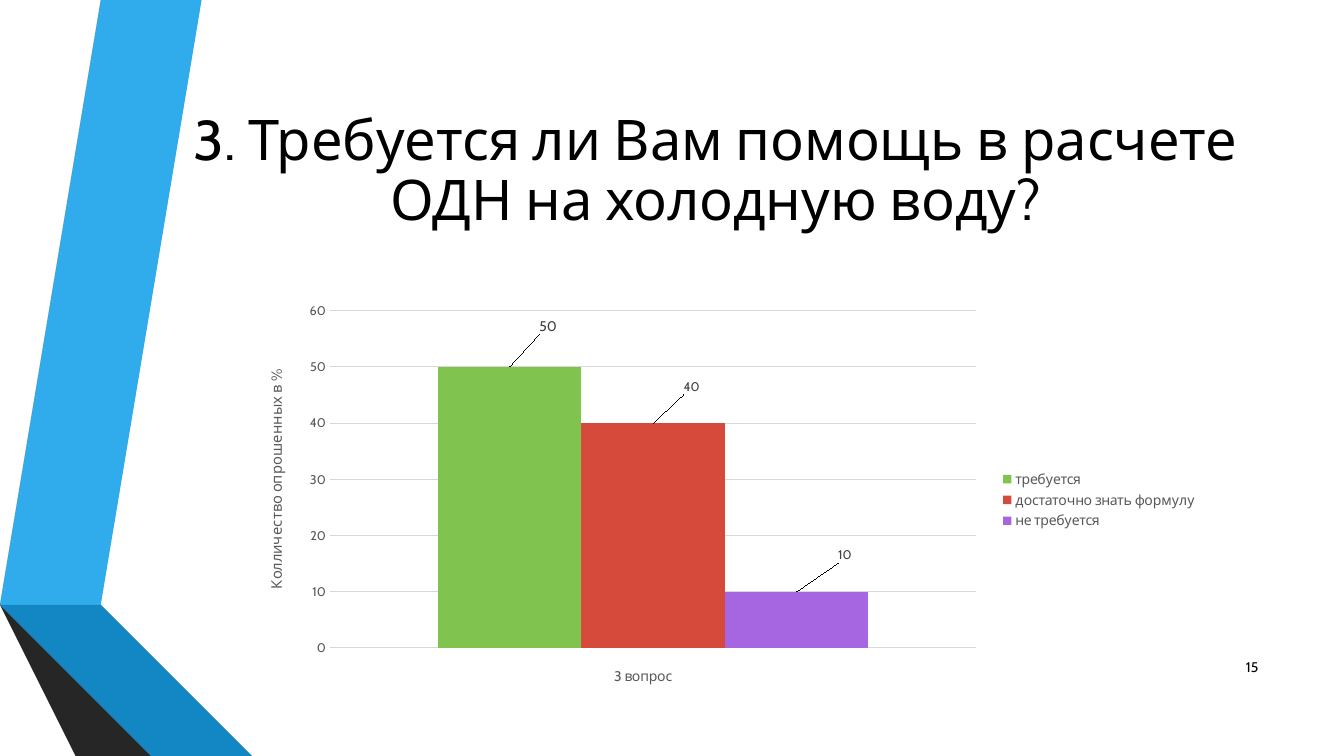
from lxml import etree
from pptx import Presentation
from pptx.chart import data as chart_data
from pptx.dml import color
from pptx.enum import chart as ec, text
from pptx.oxml import ns
from pptx.util import Inches, Pt

FONT = "Cabin"
RIBBONS = [
    ("30ACEC", [(0.5, 5.78), (0.77, 5.83), (1.73, 0), (1.45, 0)]),
    ("595959", [(1.39, 0), (1.11, 0), (0.16, 5.73), (0.44, 5.77)]),
    ("262626", [(0.16, 5.73), (1.45, 7.5), (1.51, 7.5)]),
    ("0C5A82", [(0.5, 5.79), (2.08, 7.5), (2.14, 7.5)]),
    ("1287C3", [(0.5, 5.79), (2.14, 7.5), (2.83, 7.5), (0.77, 5.83), (0.5, 5.78)]),
    ("404040", [(2.02, 7.5), (0.48, 5.83), (0.43, 5.78), (0.44, 5.77),
                (0.16, 5.73), (1.51, 7.5)]),
]
ANSWERS = [
    ("требуется", 50, "80C34F", 10, (0.04, -0.07)),
    ("достаточно знать формулу", 40, "D64A3B", 9, (0.04, -0.06)),
    ("не требуется", 10, "A666E1", 9, (0.05, -0.06)),
]


def rgb(value):
    """Turn a hex string into a colour."""
    return color.RGBColor.from_string(value)


def style_font(font, size, hue):
    """Apply the slide's typeface with a size and colour."""
    font.name, font.size, font.bold = FONT, Pt(size), False
    font.color.rgb = rgb(hue)


def place(shape, left, top, width, height):
    """Move and size a shape in inches."""
    shape.left, shape.top = Inches(left), Inches(top)
    shape.width, shape.height = Inches(width), Inches(height)


def write(frame, words, size, align, hue="000000"):
    """Write one aligned paragraph, centred vertically."""
    frame.word_wrap = True
    frame.auto_size = text.MSO_AUTO_SIZE.NONE
    frame.vertical_anchor = text.MSO_ANCHOR.MIDDLE
    paragraph = frame.paragraphs[0]
    paragraph.alignment = align
    run = paragraph.add_run()
    run.text = words
    style_font(run.font, size, hue)
    return paragraph


def add_ribbon(slide, hue, points):
    """Draw one closed band of the side decoration."""
    builder = slide.shapes.build_freeform(*points[0], scale=Inches(1))
    builder.add_line_segments(points[1:], close=True)
    ribbon = builder.convert_to_shape()
    ribbon.shadow.inherit = False
    ribbon.fill.solid()
    ribbon.fill.fore_color.rgb = rgb(hue)
    ribbon.line.fill.background()


def make_layout(**settings):
    """Build a manual chart layout element."""
    layout = etree.Element(ns.qn("c:layout"))
    manual = etree.SubElement(layout, ns.qn("c:manualLayout"))
    for tag, value in settings.items():
        etree.SubElement(manual, ns.qn(f"c:{tag}")).set("val", str(value))
    return layout


def fix_plot_area(chart):
    """Pin the inner plot area within the chart."""
    area = chart.plots[0]._element.getparent()
    for old in area.findall(ns.qn("c:layout")):
        area.remove(old)
    area.insert(0, make_layout(layoutTarget="inner", xMode="edge", yMode="edge",
                               x=0.09, y=0.04, w=0.67, h=0.82))


def title_axis(axis, words, size):
    """Give an axis a grey title."""
    run = axis.axis_title.text_frame.paragraphs[0].add_run()
    run.text = words
    style_font(run.font, size, "595959")


def format_axes(chart):
    """Format the percentage axis and the question axis."""
    percent, question = chart.value_axis, chart.category_axis
    percent.minimum_scale, percent.maximum_scale, percent.major_unit = 0, 60, 10
    percent.major_tick_mark = ec.XL_TICK_MARK.NONE
    percent.format.line.fill.background()
    percent.major_gridlines.format.line.color.rgb = rgb("D9D9D9")
    percent.major_gridlines.format.line.width = Pt(0.75)
    style_font(percent.tick_labels.font, 9, "595959")
    title_axis(percent, "Колличество опрошенных в %", 10.5)
    question.major_tick_mark = ec.XL_TICK_MARK.NONE
    question.tick_label_position = ec.XL_TICK_LABEL_POSITION.NONE
    question.format.line.fill.background()
    title_axis(question, "3 вопрос", 10)


def format_answer(series, hue, label_size, shift):
    """Colour one answer's column and move its value label."""
    series.format.fill.solid()
    series.format.fill.fore_color.rgb = rgb(hue)
    label = series.points[0].data_label
    style_font(label.font, label_size, "404040")
    label.position = ec.XL_LABEL_POSITION.OUTSIDE_END
    index = series._element.find(".//" + ns.qn("c:dLbl")).find(ns.qn("c:idx"))
    index.addnext(make_layout(x=shift[0], y=shift[1]))


def add_survey_chart(slide):
    """Add the column chart of survey answers."""
    survey = chart_data.CategoryChartData()
    survey.categories = ["1"]
    for name, share, *_ in ANSWERS:
        survey.add_series(name, [share])
    chart = slide.shapes.add_chart(
        ec.XL_CHART_TYPE.COLUMN_CLUSTERED, Inches(2.41), Inches(2.92),
        Inches(9.57), Inches(4.08), survey).chart
    style_font(chart.font, 10, "000000")
    chart.has_title = False
    chart.has_legend = True
    chart.legend.position = ec.XL_LEGEND_POSITION.RIGHT
    chart.legend.include_in_layout = False
    style_font(chart.legend.font, 10, "595959")
    columns = chart.plots[0]
    columns.gap_width, columns.overlap = 150, 0
    columns.vary_by_categories = False
    format_axes(chart)
    fix_plot_area(chart)
    for series, (_, _, hue, label_size, shift) in zip(columns.series, ANSWERS):
        format_answer(series, hue, label_size, shift)


def main():
    """Build the survey slide and save it."""
    deck = Presentation()
    deck.slide_width, deck.slide_height = Inches(13.33), Inches(7.5)
    slide = deck.slides.add_slide(deck.slide_layouts[5])
    for hue, points in RIBBONS:
        add_ribbon(slide, hue, points)
    heading = slide.shapes.title
    place(heading, 1.62, 0.75, 10.96, 1.92)
    question = write(heading.text_frame,
                     "3. Требуется ли Вам помощь в расчете ОДН на холодную воду?",
                     40, text.PP_ALIGN.CENTER)
    question.line_spacing = 0.9
    page = slide.shapes.add_textbox(Inches(11.98), Inches(6.42), Inches(0.6), Inches(0.4))
    write(page.text_frame, "15", 10, text.PP_ALIGN.RIGHT)
    add_survey_chart(slide)
    deck.save("out.pptx")


if __name__ == "__main__":
    main()
